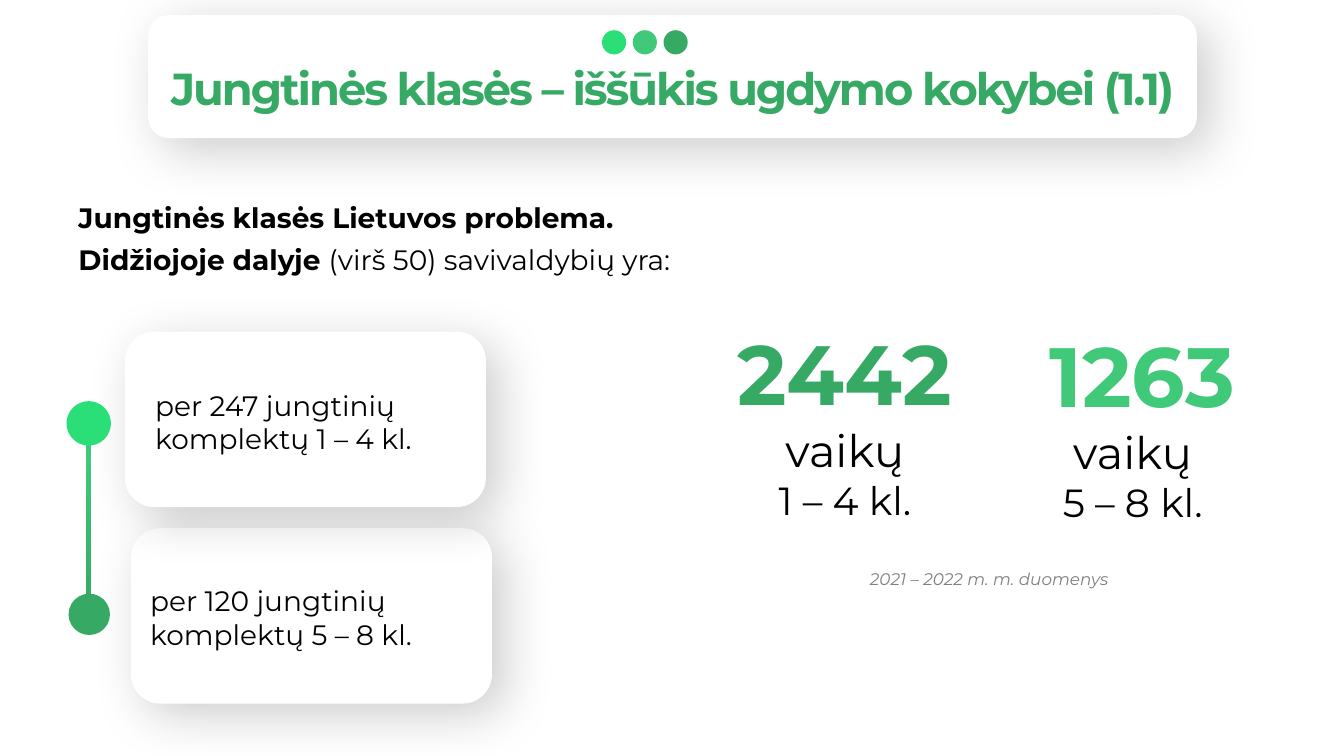
"""Builds the slide about combined classes in Lithuanian schools."""
from dataclasses import dataclass

from lxml.etree import SubElement
from pptx import Presentation
from pptx.dml.color import RGBColor
from pptx.enum.shapes import MSO_SHAPE
from pptx.enum.text import MSO_ANCHOR, MSO_AUTO_SIZE, PP_ALIGN
from pptx.oxml.ns import qn
from pptx.shapes.autoshape import Shape
from pptx.slide import Slide
from pptx.text.text import TextFrame, _Paragraph
from pptx.util import Inches, Pt

WIDTH, HEIGHT = Inches(13.33), Inches(7.5)
COLORS = {
    "bright": "2BDF78",
    "medium": "40C978",
    "deep": "36AA65",
    "white": "FFFFFF",
    "black": "000000",
    "gray": "808080",
}


@dataclass(frozen=True)
class Area:
    """Place on the slide, in percent of its width and height."""
    left: float
    top: float
    width: float
    height: float

    def box(self) -> tuple[int, int, int, int]:
        """Return the place in slide units."""
        return (int(WIDTH * self.left / 100), int(HEIGHT * self.top / 100),
                int(WIDTH * self.width / 100), int(HEIGHT * self.height / 100))


@dataclass(frozen=True)
class Dot:
    """Coloured circle."""
    area: Area
    color: str


@dataclass(frozen=True)
class ClassSet:
    """Card with the number of combined class sets."""
    card: Area
    label: Area
    text: str


@dataclass(frozen=True)
class PupilCount:
    """Large number of pupils with the grades below it."""
    area: Area
    number: str
    grades: str
    color: str
    wrap: bool
    number_align: PP_ALIGN
    number_indent: float


TITLE_CARD = Area(11.03, 2, 78.02, 16.27)
TITLE = Area(6.9, 5.33, 86.27, 10.53)
INTRO = Area(5.1, 25.87, 46.06, 15.87)
TIMELINE = Area(6.38, 55.33, 0.38, 24.8)
SOURCE_YEAR = Area(63.99, 74.53, 19.5, 4)
TITLE_DOTS = [
    Dot(Area(44.79 + 2.29 * step, 4, 1.8, 3.2), color)
    for step, color in enumerate(("bright", "medium", "deep"))
]
TIMELINE_DOTS = [
    Dot(Area(5.1, 78.53, 3.08, 5.47), "deep"),
    Dot(Area(4.95, 53.07, 3.3, 5.87), "bright"),
]
CLASS_SETS = [
    ClassSet(Area(9.75, 69.87, 26.86, 23.2), Area(10.43, 76.53, 26.03, 10.27),
             "per 120 jungtinių komplektų 5 – 8 kl."),
    ClassSet(Area(9.3, 43.87, 26.86, 23.2), Area(10.8, 50.67, 25.28, 10.27),
             "per 247 jungtinių komplektų 1 – 4 kl."),
]
PUPIL_COUNTS = [
    PupilCount(Area(51.16, 41.87, 23.41, 28.27), "2442", "1 – 4 kl.", "deep",
               True, PP_ALIGN.CENTER, 0),
    PupilCount(Area(75.92, 42.13, 18.23, 28.27), "1263", "5 – 8 kl.", "medium",
               False, PP_ALIGN.LEFT, 13.6),
]


def rgb(color: str) -> RGBColor:
    """Look up a named colour."""
    return RGBColor.from_string(COLORS[color])


def write(paragraph: _Paragraph, text: str, *, size: float = 20, color: str = "black",
          bold: bool = False, italic: bool = False, spacing: float = 0) -> None:
    """Add a formatted run to a paragraph."""
    run = paragraph.add_run()
    run.text = text
    run.font.name = "Montserrat"
    run.font.size = Pt(size)
    run.font.color.rgb = rgb(color)
    run.font.bold = bold
    run.font.italic = italic
    if spacing:
        run.font._element.set("spc", str(int(spacing * 100)))


def add_text_frame(slide: Slide, area: Area, wrap: bool = True) -> TextFrame:
    """Add a text box that grows with its text."""
    frame = slide.shapes.add_textbox(*area.box()).text_frame
    frame.word_wrap = wrap
    frame.auto_size = MSO_AUTO_SIZE.SHAPE_TO_FIT_TEXT
    return frame


def add_plain_shape(slide: Slide, preset: MSO_SHAPE, area: Area, color: str) -> Shape:
    """Add a filled shape without outline or shadow."""
    shape = slide.shapes.add_shape(preset, *area.box())
    shape.shadow.inherit = False
    shape.fill.solid()
    shape.fill.fore_color.rgb = rgb(color)
    shape.line.fill.background()
    return shape


def add_card(slide: Slide, area: Area) -> None:
    """Add a white rounded card with a soft shadow."""
    card = add_plain_shape(slide, MSO_SHAPE.ROUNDED_RECTANGLE, area, "white")
    effects = card._element.spPr.find(qn("a:effectLst"))
    shadow = SubElement(effects, qn("a:outerShdw"), blurRad=str(Pt(37)), dist=str(Pt(12)),
                        dir=str(43 * 60000), algn="tl", rotWithShape="0")
    tint = SubElement(shadow, qn("a:srgbClr"), val=COLORS["black"])
    SubElement(tint, qn("a:alpha"), val="20000")


def add_dots(slide: Slide, dots: list[Dot]) -> None:
    """Add a group of circles."""
    for dot in dots:
        add_plain_shape(slide, MSO_SHAPE.OVAL, dot.area, dot.color)


def add_timeline(slide: Slide) -> None:
    """Add the bar that fades from medium to deep green."""
    bar = add_plain_shape(slide, MSO_SHAPE.RECTANGLE, TIMELINE, "medium")
    bar.fill.gradient()
    bar.fill.gradient_angle = 270
    for stop, position, color in zip(bar.fill.gradient_stops, (0.19, 1), ("medium", "deep")):
        stop.position = position
        stop.color.rgb = rgb(color)


def add_title(slide: Slide) -> None:
    """Place the title on its card."""
    add_card(slide, TITLE_CARD)
    title = slide.shapes.title
    title._element.getparent().append(title._element)
    title.left, title.top, title.width, title.height = TITLE.box()
    title.text_frame.auto_size = MSO_AUTO_SIZE.NONE
    title.text_frame.vertical_anchor = MSO_ANCHOR.BOTTOM
    heading = title.text_frame.paragraphs[0]
    heading.alignment = PP_ALIGN.CENTER
    heading.line_spacing = 0.9
    write(heading, "Jungtinės klasės – iššūkis ugdymo kokybei (1.1)",
          size=32, color="deep", bold=True, spacing=-1.5)
    add_dots(slide, TITLE_DOTS)


def add_intro(slide: Slide) -> None:
    """Add the two opening lines."""
    frame = add_text_frame(slide, INTRO)
    problem, extent = frame.paragraphs[0], frame.add_paragraph()
    problem.space_after = extent.space_after = Pt(6)
    write(problem, "Jungtinės klasės Lietuvos problema.", bold=True)
    write(extent, "Didžiojoje dalyje ", bold=True)
    write(extent, "(virš 50) savivaldybių yra:")


def add_class_set(slide: Slide, class_set: ClassSet) -> None:
    """Add one card with its label."""
    add_card(slide, class_set.card)
    label = add_text_frame(slide, class_set.label).paragraphs[0]
    label.space_after = Pt(6)
    write(label, class_set.text)


def add_pupil_count(slide: Slide, count: PupilCount) -> None:
    """Add one large number with its unit and grades."""
    frame = add_text_frame(slide, count.area, count.wrap)
    number, unit, grades = frame.paragraphs[0], frame.add_paragraph(), frame.add_paragraph()
    number.alignment = count.number_align
    unit.alignment = grades.alignment = PP_ALIGN.CENTER
    if count.number_indent:
        number._p.get_or_add_pPr().set("marL", str(Pt(count.number_indent)))
    write(number, count.number, size=60, color=count.color, bold=True)
    write(unit, "vaikų", size=32)
    write(grades, count.grades, size=28)


def main() -> None:
    """Build and save the slide."""
    deck = Presentation()
    deck.slide_width, deck.slide_height = WIDTH, HEIGHT
    slide = deck.slides.add_slide(deck.slide_layouts[5])
    add_title(slide)
    add_timeline(slide)
    for class_set in CLASS_SETS:
        add_class_set(slide, class_set)
    add_dots(slide, TIMELINE_DOTS)
    add_intro(slide)
    for count in PUPIL_COUNTS:
        add_pupil_count(slide, count)
    source_year = add_text_frame(slide, SOURCE_YEAR, wrap=False).paragraphs[0]
    write(source_year, "2021 – 2022 m. m. duomenys", size=12, color="gray", italic=True)
    deck.save("out.pptx")


if __name__ == "__main__":
    main()
